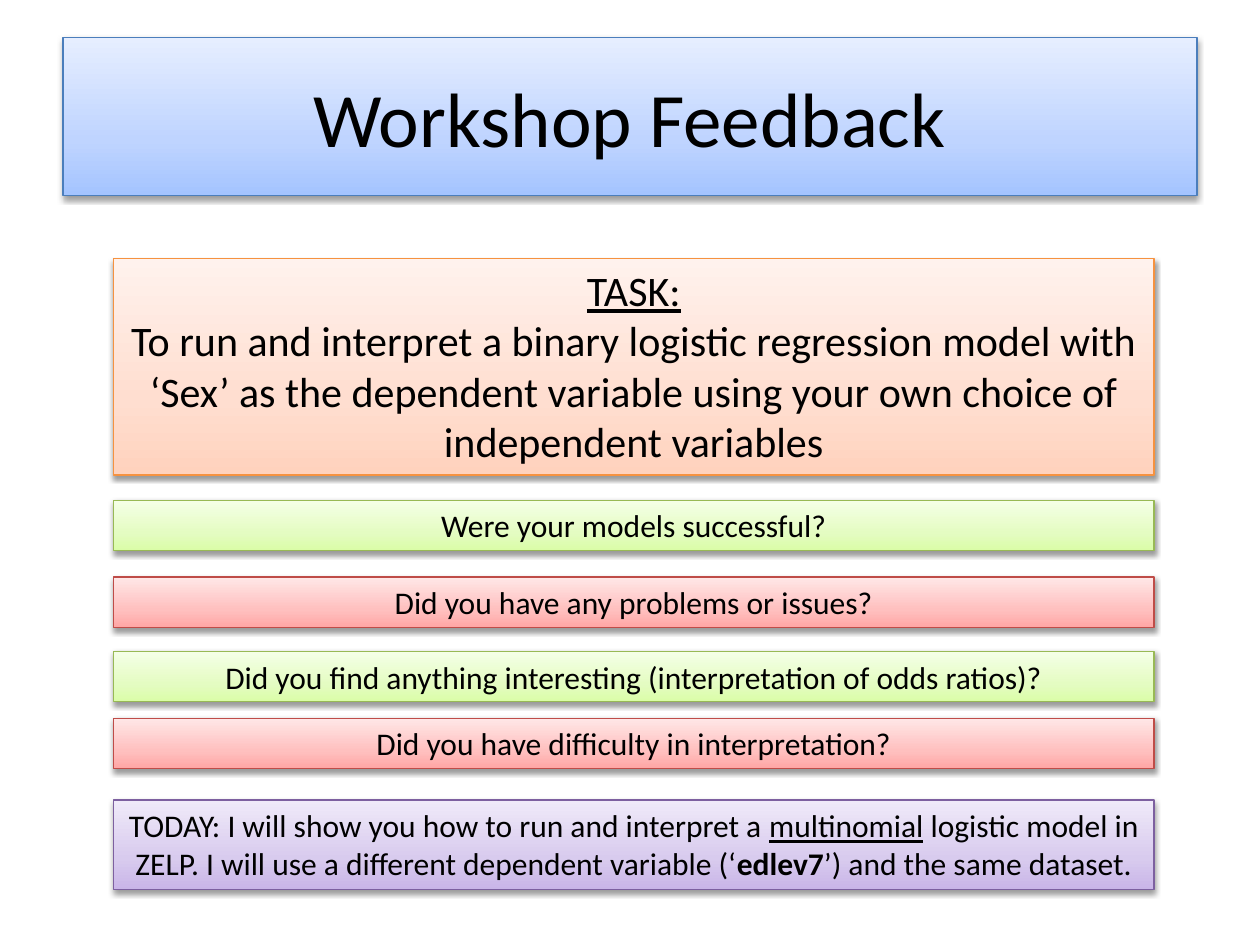
from copy import deepcopy
from dataclasses import dataclass

from lxml import etree
from pptx import Presentation
from pptx import util as u
from pptx.dml.color import RGBColor
from pptx.enum import text
from pptx.oxml.ns import qn

CELL = 0.1  # inches: the slide is a grid of 100 columns by 75 rows
COLS, ROWS = 100, 75
LEFT, WIDTH = 9, 82.6  # columns shared by all panels
FONT = "Calibri"
STOPS = (0, 0.35, 1)


@dataclass(frozen=True)
class Theme:
    stops: tuple[str, str, str]  # from bottom to top
    line: str


@dataclass(frozen=True)
class Run:
    text: str
    underline: bool = False
    bold: bool = False


@dataclass(frozen=True)
class Panel:
    row: float
    rows: float
    theme: Theme
    paragraphs: tuple[tuple[Run, ...], ...]
    size: int = 18


BLUE = Theme(("A4C4FF", "BFD4FF", "E6EEFF"), "4B7EBC")
ORANGE = Theme(("FFD2BD", "FFDED0", "FFF2ED"), "F69240")
GREEN = Theme(("DAFDA7", "E4FCC2", "F5FFE7"), "98B955")
RED = Theme(("FFA6A5", "FFC0BF", "FFE7E7"), "BF4C48")
PURPLE = Theme(("C9B5E8", "D8CBEE", "F0EAF9"), "7D60A0")


def question(row: float, theme: Theme, wording: str) -> Panel:
    return Panel(row, 4, theme, ((Run(wording),),))


PANELS = (
    Panel(20.5, 17.2, ORANGE, (
        (Run("TASK:", underline=True),),
        (Run("To run and interpret a binary logistic regression model with "
             "‘Sex’ as the dependent variable using your own choice of "
             "independent variables"),),
    ), size=24),
    question(39.7, GREEN, "Were your models successful?"),
    question(45.8, RED, "Did you have any problems or issues?"),
    question(51.7, GREEN, "Did you find anything interesting "
                          "(interpretation of odds ratios)?"),
    question(57, RED, "Did you have difficulty in interpretation?"),
    Panel(63.5, 7.1, PURPLE, ((
        Run("TODAY: I will show you how to run and interpret a "),
        Run("multinomial", underline=True),
        Run(" logistic model in ZELP. I will use a different dependent "
            "variable (‘"),
        Run("edlev7", bold=True),
        Run("’) and the same dataset."),
    ),)),
)


def color(value: str) -> RGBColor:
    return RGBColor.from_string(value)


def cells(count: float) -> u.Emu:
    return u.Inches(count * CELL)


def add_shadow(sp) -> None:
    """Cast a soft shadow straight down."""
    sp.shadow.inherit = False
    effects = sp.element.spPr.find(qn("a:effectLst"))
    outer = etree.SubElement(effects, qn("a:outerShdw"), blurRad="40000",
                             dist="20000", dir="5400000", rotWithShape="0")
    black = etree.SubElement(outer, qn("a:srgbClr"), val="000000")
    etree.SubElement(black, qn("a:alpha"), val="38000")


def paint(sp, theme: Theme) -> None:
    """Give a shape its three-stop gradient, outline and shadow."""
    sp.fill.gradient()
    sp.fill.gradient_angle = 90
    stop_list = sp.element.spPr.find(".//" + qn("a:gsLst"))
    stop_list.append(deepcopy(stop_list[-1]))
    for stop, position, value in zip(sp.fill.gradient_stops, STOPS, theme.stops):
        stop.position = position
        stop.color.rgb = color(value)
    sp.line.color.rgb = color(theme.line)
    sp.line.width = u.Pt(0.75)
    add_shadow(sp)


def format_paragraph(p, size: int) -> None:
    p.alignment = text.PP_ALIGN.CENTER
    p.font.name = FONT
    p.font.size = u.Pt(size)
    p.font.color.rgb = color("000000")


def set_title(sp, wording: str) -> None:
    sp.left, sp.top, sp.width, sp.height = map(cells, (5, 3, 90, 12.5))
    paint(sp, BLUE)
    tf = sp.text_frame
    tf.text = wording
    tf.vertical_anchor = text.MSO_ANCHOR.MIDDLE
    format_paragraph(tf.paragraphs[0], 44)


def add_panel(slide, panel: Panel) -> None:
    sp = slide.shapes.add_textbox(
        *map(cells, (LEFT, panel.row, WIDTH, panel.rows)))
    paint(sp, panel.theme)
    tf = sp.text_frame
    tf.word_wrap = True
    tf.auto_size = text.MSO_AUTO_SIZE.SHAPE_TO_FIT_TEXT
    for i, runs in enumerate(panel.paragraphs):
        p = tf.add_paragraph() if i else tf.paragraphs[0]
        format_paragraph(p, panel.size)
        for run in runs:
            r = p.add_run()
            r.text = run.text
            if run.underline:
                r.font.underline = True
            if run.bold:
                r.font.bold = True


def main() -> None:
    prs = Presentation()
    prs.slide_width, prs.slide_height = cells(COLS), cells(ROWS)
    slide = prs.slides.add_slide(prs.slide_layouts.get_by_name("Title Only"))
    set_title(slide.shapes.title, "Workshop Feedback")
    for panel in PANELS:
        add_panel(slide, panel)
    prs.save("out.pptx")


if __name__ == "__main__":
    main()
